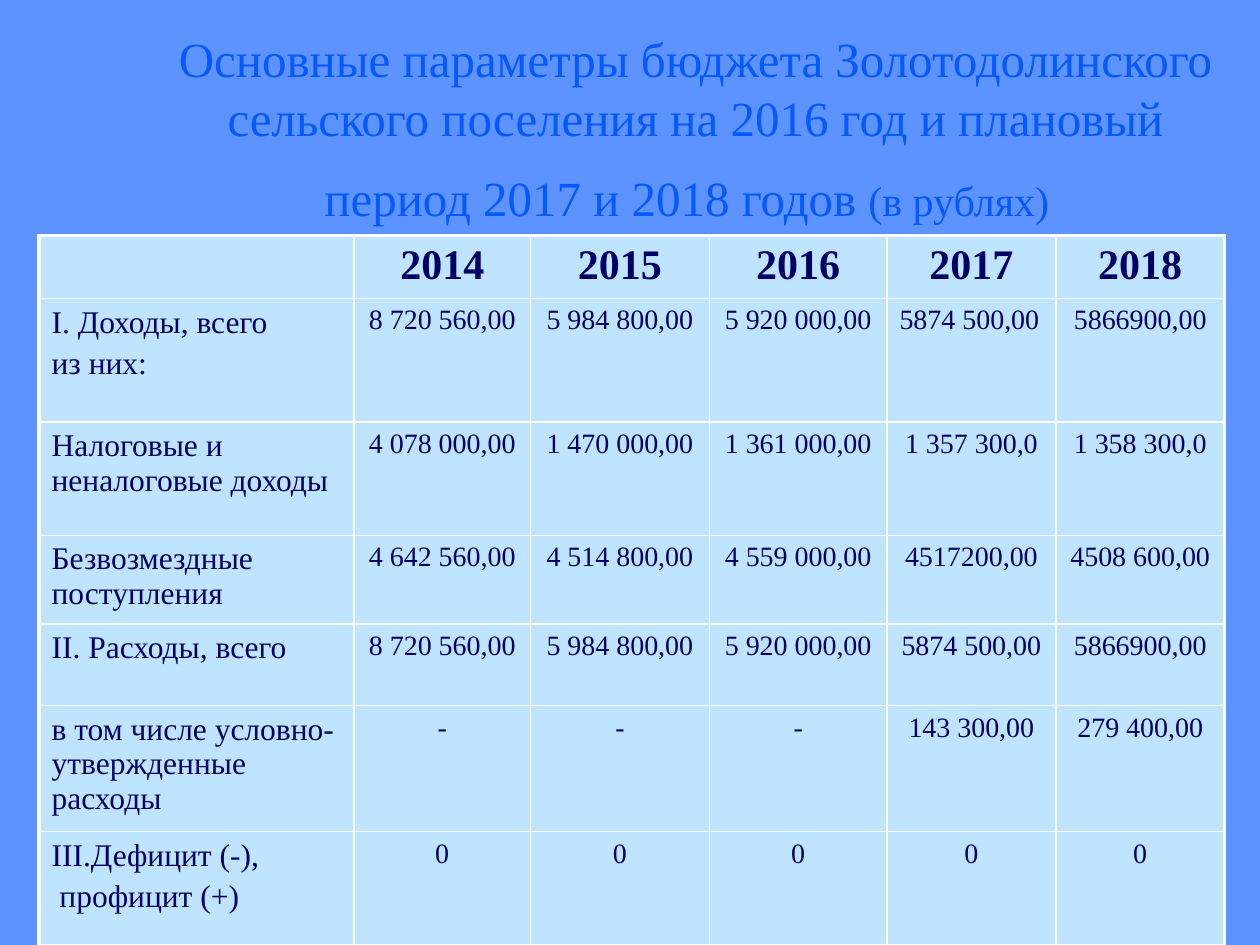
from lxml.etree import SubElement
from pptx import Presentation
from pptx.dml.color import RGBColor
from pptx.enum.text import MSO_ANCHOR, PP_ALIGN
from pptx.oxml.ns import qn
from pptx.util import Inches, Pt

FONT = "Times New Roman"
BACK = RGBColor(0x5D, 0x93, 0xFF)
BLUE = RGBColor(0x06, 0x59, 0xFF)
NAVY = RGBColor(0x00, 0x00, 0x66)
PALE = RGBColor(0xBF, 0xE4, 0xFF)
WHITE = RGBColor(0xFF, 0xFF, 0xFF)

# Each title run is a text and its size; the last one sets the line height
TITLE = [
    ("Основные параметры бюджета Золотодолинского сельского поселения "
     "на 2016 год и плановый период 2017 и 2018 годов ", 28),
    ("(в рублях)", 24),
    (" ", 40),
]
COLS = [2.5, 1.4, 1.42, 1.41, 1.34, 1.34]
ROWS = [0.5, 0.98, 0.9, 0.65, 0.65, 0.94, 0.9]
DATA = [
    ["", "2014", "2015", "2016", "2017", "2018"],
    ["I. Доходы, всего\nиз них:", "8 720 560,00", "5 984 800,00",
     "5 920 000,00", "5874 500,00", "5866900,00"],
    ["Налоговые и неналоговые доходы", "4 078 000,00", "1 470 000,00",
     "1 361 000,00", "1 357 300,0", "1 358 300,0"],
    ["Безвозмездные поступления", "4 642 560,00", "4 514 800,00",
     "4 559 000,00", "4517200,00", "4508 600,00"],
    ["II. Расходы, всего", "8 720 560,00", "5 984 800,00",
     "5 920 000,00", "5874 500,00", "5866900,00"],
    ["в том числе условно-утвержденные расходы", "-", "-", "-",
     "143 300,00", "279 400,00"],
    ["III.Дефицит (-),\n профицит (+)", "0", "0", "0", "0", "0"],
]
LEFT_CELL = (1, 4)  # the one figure that is set to the left


def write(frame, runs, color=NAVY, bold=False, align=PP_ALIGN.CENTER):
    """Fill a frame with (text, size) runs; a line break starts a paragraph."""
    para = frame.paragraphs[0]
    para.alignment = align
    for text, size in runs:
        for num, line in enumerate(text.split("\n")):
            if num:
                para = frame.add_paragraph()
                para.alignment = align
                para.space_before = Pt(size * 0.2)
            run = para.add_run()
            run.text = line
            font = run.font
            font.name, font.size, font.bold = FONT, Pt(size), bold
            font.color.rgb = color


def edge(cell, side, width):
    """Draw one border of a cell."""
    line = SubElement(cell._tc.get_or_add_tcPr(), qn("a:ln" + side),
                      w=str(Pt(width)))
    fill = SubElement(line, qn("a:solidFill"))
    SubElement(fill, qn("a:srgbClr"), val=str(WHITE))


def style(cell, row, col):
    """Give a cell its borders, heavier on the outer left, top and right."""
    outer = {"L": col == 0, "R": col == len(COLS) - 1, "T": row == 0, "B": False}
    for side, heavy in outer.items():
        edge(cell, side, 2.25 if heavy else 1)
    cell.fill.solid()
    cell.fill.fore_color.rgb = PALE


def add_title(slide):
    box = slide.shapes.add_textbox(Inches(1.26), Inches(0.23),
                                   Inches(8.52), Inches(1.6))
    frame = box.text_frame
    frame.word_wrap = True
    frame.vertical_anchor = MSO_ANCHOR.MIDDLE
    write(frame, TITLE, color=BLUE)


def add_grid(slide):
    table = slide.shapes.add_table(
        len(ROWS), len(COLS), Inches(0.31), Inches(1.87),
        Inches(sum(COLS)), Inches(sum(ROWS))).table
    table.first_row = table.horz_banding = False
    for col, width in zip(table.columns, COLS):
        col.width = Inches(width)
    for row, height in zip(table.rows, ROWS):
        row.height = Inches(height)
    for r, texts in enumerate(DATA):
        for c, text in enumerate(texts):
            cell = table.cell(r, c)
            style(cell, r, c)
            if not text:
                continue
            size = 24 if r == 0 else 18 if c == 0 else 16
            left = c == 0 or (r, c) == LEFT_CELL
            write(cell.text_frame, [(text, size)], bold=r == 0,
                  align=PP_ALIGN.LEFT if left else PP_ALIGN.CENTER)


def main():
    deck = Presentation()
    deck.slide_width, deck.slide_height = Inches(10), Inches(7.5)
    slide = deck.slides.add_slide(deck.slide_layouts[6])
    # Background
    slide.background.fill.solid()
    slide.background.fill.fore_color.rgb = BACK
    # Heading and budget table
    add_title(slide)
    add_grid(slide)
    deck.save("out.pptx")


if __name__ == "__main__":
    main()
